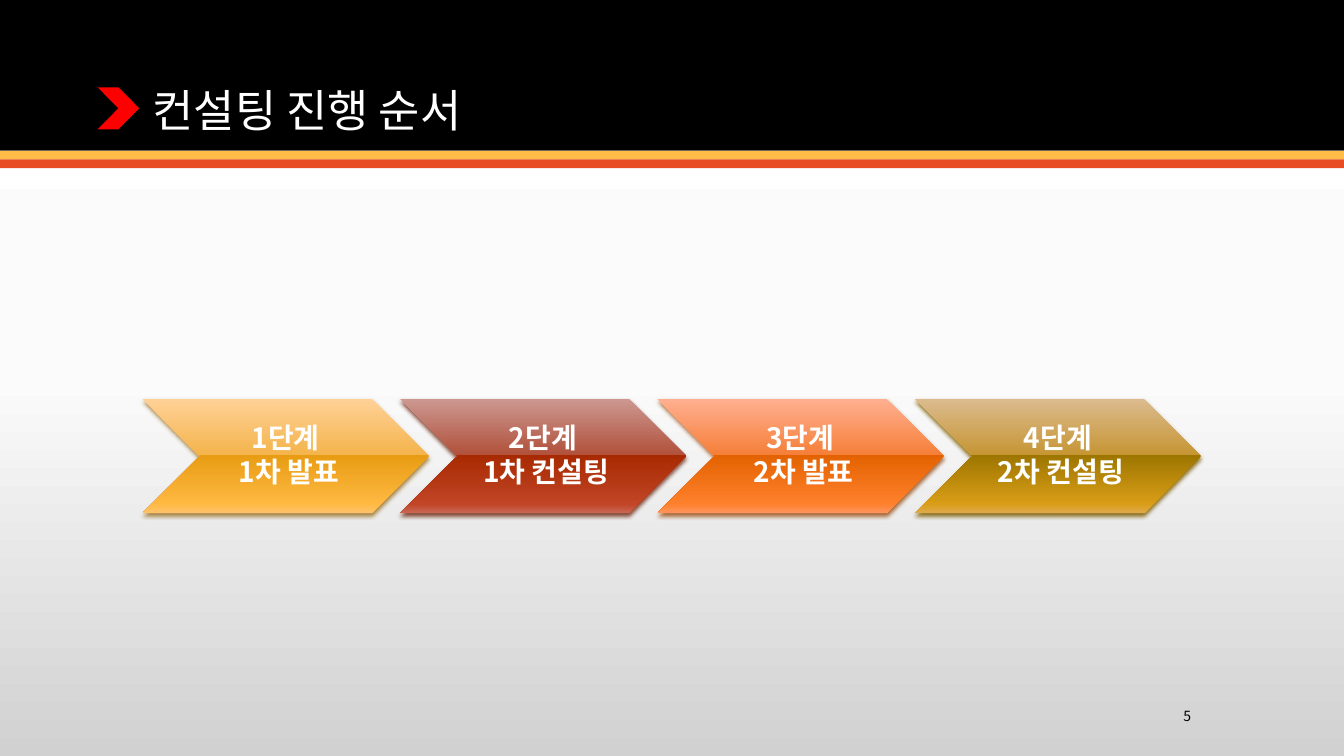
from pptx import Presentation
from pptx.dml.color import RGBColor
from pptx.enum.shapes import MSO_SHAPE
from pptx.enum.text import MSO_ANCHOR, PP_ALIGN
from pptx.oxml.ns import qn
from pptx.util import Cm, Pt
from lxml import etree

RECTANGLE, CHEVRON = MSO_SHAPE.RECTANGLE, MSO_SHAPE.CHEVRON
MIDDLE, BOTTOM = MSO_ANCHOR.MIDDLE, MSO_ANCHOR.BOTTOM
LEFT, CENTER, RIGHT = PP_ALIGN.LEFT, PP_ALIGN.CENTER, PP_ALIGN.RIGHT

FONT = "Noto Sans CJK KR"
BLACK = RGBColor(0x00, 0x00, 0x00)
WHITE = RGBColor(0xFF, 0xFF, 0xFF)
RED = RGBColor(0xFF, 0x00, 0x00)
AMBER = RGBColor(0xFF, 0xBD, 0x47)
VERMILION = RGBColor(0xE8, 0x4C, 0x22)

PAGE_STOPS = (0, 50, 100)
PAGE_COLORS = [RGBColor.from_string(c) for c in ("FFFFFF", "FBFBFB", "D1D1D1")]

# Each step: lines of text, glossy gradient colours, shadow colour
STEP_STOPS = (0, 49, 49, 92, 100)
STEPS = [
    (("1단계 ", "1차 발표"), "FFD197 F4B44C E89C13 FFB942 FFC36A", RGBColor(0x9D, 0x75, 0x2C)),
    (("2단계 ", "1차 컨설팅"), "CC9790 B1513C A82A02 C14526 C96654", RGBColor(0x70, 0x2D, 0x17)),
    (("3단계 ", "2차 발표"), "FFAF90 F57F39 E36200 FF802C FF945E", RGBColor(0x9D, 0x52, 0x18)),
    (("4단계 ", "2차 컨설팅"), "DBBB8E C69534 9D7600 D99D17 DFA94C", RGBColor(0x7E, 0x5E, 0x00)),
]


def add_color(parent, color):
    return etree.SubElement(parent, qn("a:srgbClr"), val=str(color))


def paint_gradient(fill, element, stops, colors):
    """Fill from top to bottom with the given stops (percent)."""
    fill.gradient()
    fill.gradient_angle = 270
    stop_list = element.find(".//" + qn("a:gsLst"))
    for stop in list(stop_list):
        stop_list.remove(stop)
    for position, color in zip(stops, colors):
        stop = etree.SubElement(stop_list, qn("a:gs"), pos=str(position * 1000))
        add_color(stop, color)


def add_plain_shape(page, kind, left, top, width, height, color=None):
    shape = page.shapes.add_shape(kind, left, top, width, height)
    shape.line.fill.background()
    shape.shadow.inherit = False
    if color is not None:
        shape.fill.solid()
        shape.fill.fore_color.rgb = color
    return shape


def add_shadow(shape, color):
    effects = shape.element.spPr.find(qn("a:effectLst"))
    shadow = etree.SubElement(
        effects, qn("a:outerShdw"), blurRad=str(Pt(3.1)), dist=str(Pt(2)),
        dir="5400000", rotWithShape="0")
    etree.SubElement(add_color(shadow, color), qn("a:alpha"), val="83000")


def write_lines(box, lines, size, color, align, anchor, bold=False):
    frame = box.text_frame
    frame.word_wrap = True
    frame.vertical_anchor = anchor
    for index, line in enumerate(lines):
        para = frame.add_paragraph() if index else frame.paragraphs[0]
        para.text = line
        para.alignment = align
        para.line_spacing = 0.9
        font = para.font
        font.name, font.size, font.bold = FONT, Pt(size), bold
        font.color.rgb = color
        latin = para._p.pPr.find(".//" + qn("a:latin"))
        latin.addnext(latin.makeelement(qn("a:ea"), typeface=FONT))
    return frame


def build_header(page, left, top, width, height):
    # Black band with two thin stripes beneath it
    stripe = Cm(0.22)
    add_plain_shape(page, RECTANGLE, left, top, width, height, BLACK)
    for index, color in enumerate((AMBER, VERMILION)):
        add_plain_shape(page, RECTANGLE, left, top + height + index * stripe,
                        width, stripe, color)
    # Marker and title
    add_plain_shape(page, CHEVRON, left + Cm(2.46), top + Cm(2.2), Cm(1.05), Cm(1.06), RED)
    title = page.shapes.add_textbox(left + Cm(3.6), top + Cm(0.71), Cm(26.67), Cm(2.87))
    write_lines(title, ["컨설팅 진행 순서"], 32, WHITE, LEFT, BOTTOM)


def build_process(page, left, top, width, height):
    step_width = Cm(7.21)
    pitch = (width - step_width) // (len(STEPS) - 1)
    for index, (lines, colors, shadow_color) in enumerate(STEPS):
        step = add_plain_shape(page, CHEVRON, left + index * pitch, top, step_width, height)
        colors = [RGBColor.from_string(color) for color in colors.split()]
        paint_gradient(step.fill, step.element, STEP_STOPS, colors)
        add_shadow(step, shadow_color)
        frame = write_lines(step, lines, 20, WHITE, CENTER, MIDDLE, bold=True)
        frame.margin_left = Cm(0.23)
        frame.margin_right = frame.margin_top = frame.margin_bottom = Cm(0.08)
        for para in frame.paragraphs:
            para.space_after = Pt(2.5)


def build_page_number(page, left, top, width, height):
    box = page.shapes.add_textbox(left, top, width, height)
    write_lines(box, ["5"], 10, BLACK, RIGHT, MIDDLE)


def main():
    deck = Presentation()
    deck.slide_width, deck.slide_height = Cm(33.87), Cm(19.05)
    page = deck.slides.add_slide(deck.slide_layouts[6])
    paint_gradient(page.background.fill, page.element, PAGE_STOPS, PAGE_COLORS)
    build_header(page, 0, 0, deck.slide_width, Cm(3.8))
    build_process(page, Cm(3.6), Cm(10.06), Cm(26.67), Cm(2.87))
    build_page_number(page, Cm(26.46), Cm(17.7), Cm(3.81), Cm(0.76))
    deck.save("out.pptx")


if __name__ == "__main__":
    main()
